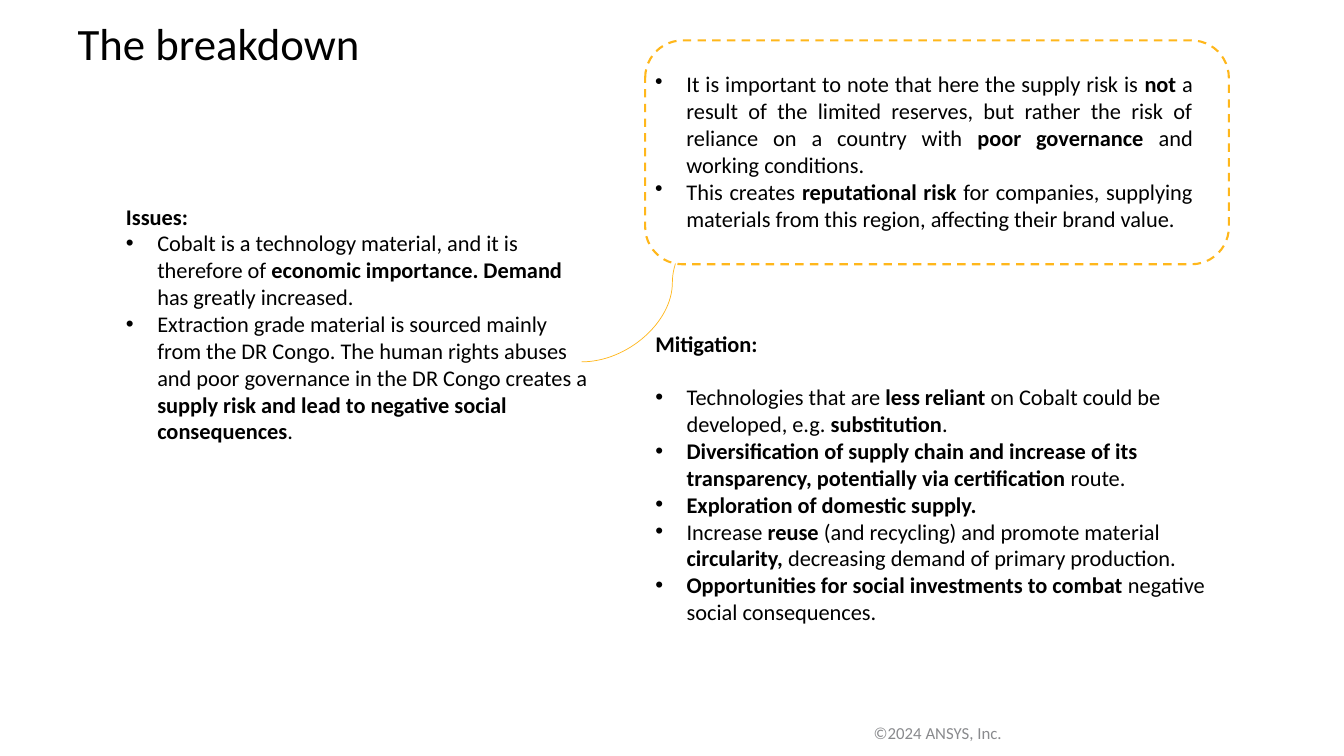
from lxml.etree import SubElement
from pptx import Presentation
from pptx.dml.color import RGBColor
from pptx.enum.dml import MSO_LINE
from pptx.enum.shapes import MSO_CONNECTOR, MSO_SHAPE
from pptx.enum.text import MSO_ANCHOR, MSO_AUTO_SIZE, PP_ALIGN
from pptx.oxml.ns import qn
from pptx.util import Cm, Pt

FONT = "Calibri"
BLACK, GREY, AMBER, WHITE = "000000", "898A8D", "FFB71B", "FFFFFF"
INDENT = Cm(0.79)

ISSUES = [
    "Cobalt is a technology material, and it is therefore of "
    "**economic importance. Demand** has greatly increased.",
    "Extraction grade material is sourced mainly from the DR Congo. The human rights "
    "abuses and poor governance in the DR Congo creates a "
    "**supply risk and lead to negative social consequences**.",
]
SUPPLY_RISK = [
    "It is important to note that here the supply risk is **not** a result of the limited "
    "reserves, but rather the risk of reliance on a country with "
    "**poor governance **and working conditions.",
    "This creates **reputational risk **for companies, supplying materials from this "
    "region, affecting their brand value.",
]
MITIGATION = [
    "Technologies that are **less reliant **on Cobalt could be developed, e.g. "
    "**substitution**.",
    "**Diversification of supply chain and increase of its transparency, potentially "
    "via certification** route.",
    "**Exploration of domestic supply.**",
    "Increase **reuse **(and recycling) and promote material **circularity, **"
    "decreasing demand of primary production.",
    "**Opportunities for social investments to combat **negative social consequences.",
]


def colour(hex_value):
    return RGBColor.from_string(hex_value)


def place(shape, left, top, width, height):
    shape.left, shape.top = Cm(left), Cm(top)
    shape.width, shape.height = Cm(width), Cm(height)


def prepare(frame):
    frame.word_wrap = True
    frame.auto_size = MSO_AUTO_SIZE.NONE
    frame.vertical_anchor = MSO_ANCHOR.TOP


def style(paragraph, size, hex_value=BLACK, align=PP_ALIGN.LEFT):
    paragraph.alignment = align
    font = paragraph.font
    font.name, font.size = FONT, Pt(size)
    font.color.rgb = colour(hex_value)


def set_bullet(paragraph, char=None):
    """Give the paragraph a hanging bullet, or none at all."""
    properties = paragraph._p.get_or_add_pPr()
    properties.set("marL", str(INDENT if char else 0))
    properties.set("indent", str(-INDENT if char else 0))
    if char:
        SubElement(properties, qn("a:buChar")).set("char", char)
    else:
        SubElement(properties, qn("a:buNone"))


def add_marked_text(paragraph, text):
    """Write text in which ** switches bold on and off."""
    for position, part in enumerate(text.split("**")):
        if part:
            run = paragraph.add_run()
            run.text = part
            run.font.bold = position % 2 == 1


def fill_list(frame, items, heading=None, gap=0, align=PP_ALIGN.LEFT):
    prepare(frame)
    lines = [f"**{heading}**"] + items if heading else items
    first_item = 1 if heading else 0
    for index, line in enumerate(lines):
        paragraph = frame.add_paragraph() if index else frame.paragraphs[0]
        set_bullet(paragraph, "•" if index >= first_item else None)
        paragraph.space_before = Pt(gap if index == first_item else 0)
        style(paragraph, 16, align=align)
        add_marked_text(paragraph, line)


def add_title(slide, text):
    title = slide.shapes.title
    place(title, 1.7, 0.41, 30.48, 2.36)
    prepare(title.text_frame)
    title.text_frame.text = text
    heading = title.text_frame.paragraphs[0]
    heading.line_spacing = 0.9
    style(heading, 32)


def add_curve(slide, start, end):
    curve = slide.shapes.add_connector(
        MSO_CONNECTOR.CURVE, *(Cm(value) for value in start + end))
    curve.line.color.rgb = colour(AMBER)
    curve.line.width = Pt(0.5)
    SubElement(curve.line._get_or_add_ln(), qn("a:tailEnd")).set("type", "triangle")
    SubElement(curve._element.spPr, qn("a:effectLst"))


def add_callout(slide, items):
    callout = slide.shapes.add_group_shape().shapes
    border = callout.add_shape(
        MSO_SHAPE.ROUNDED_RECTANGLE, Cm(16.26), Cm(1.02), Cm(14.71), Cm(5.64))
    border.shadow.inherit = False
    border.fill.solid()
    border.fill.fore_color.rgb = colour(WHITE)
    border.line.color.rgb = colour(AMBER)
    border.line.width = Pt(1.5)
    border.line.dash_style = MSO_LINE.DASH
    note = callout.add_textbox(Cm(16.26), Cm(1.65), Cm(14.05), Cm(3.2))
    fill_list(note.text_frame, items, align=PP_ALIGN.JUSTIFY)


def add_copyright(slide, text):
    copyright_line = slide.shapes.add_textbox(Cm(21.77), Cm(18.08), Cm(4), Cm(0.76))
    prepare(copyright_line.text_frame)
    copyright_line.text_frame.text = text
    style(copyright_line.text_frame.paragraphs[0], 12, GREY)


def main():
    deck = Presentation()
    deck.slide_width, deck.slide_height = Cm(33.87), Cm(19.05)
    slide = deck.slides.add_slide(deck.slide_layouts.get_by_name("Two Content"))

    # Title and copyright line
    add_title(slide, "The breakdown")
    add_copyright(slide, "©2024 ANSYS, Inc.")

    # Issues and mitigation lists
    issues, mitigation = list(slide.placeholders)[1:]
    place(issues, 2.92, 4.98, 12.22, 7.09)
    fill_list(issues.text_frame, ISSUES, "Issues:")
    place(mitigation, 16.26, 8.18, 14.71, 7.77)
    fill_list(mitigation.text_frame, MITIGATION, "Mitigation:", gap=19.2)

    # Supply risk callout, tied to the issues
    add_curve(slide, (14.66, 9.12), (19.23, 5.13))
    add_callout(slide, SUPPLY_RISK)

    deck.save("out.pptx")


if __name__ == "__main__":
    main()
